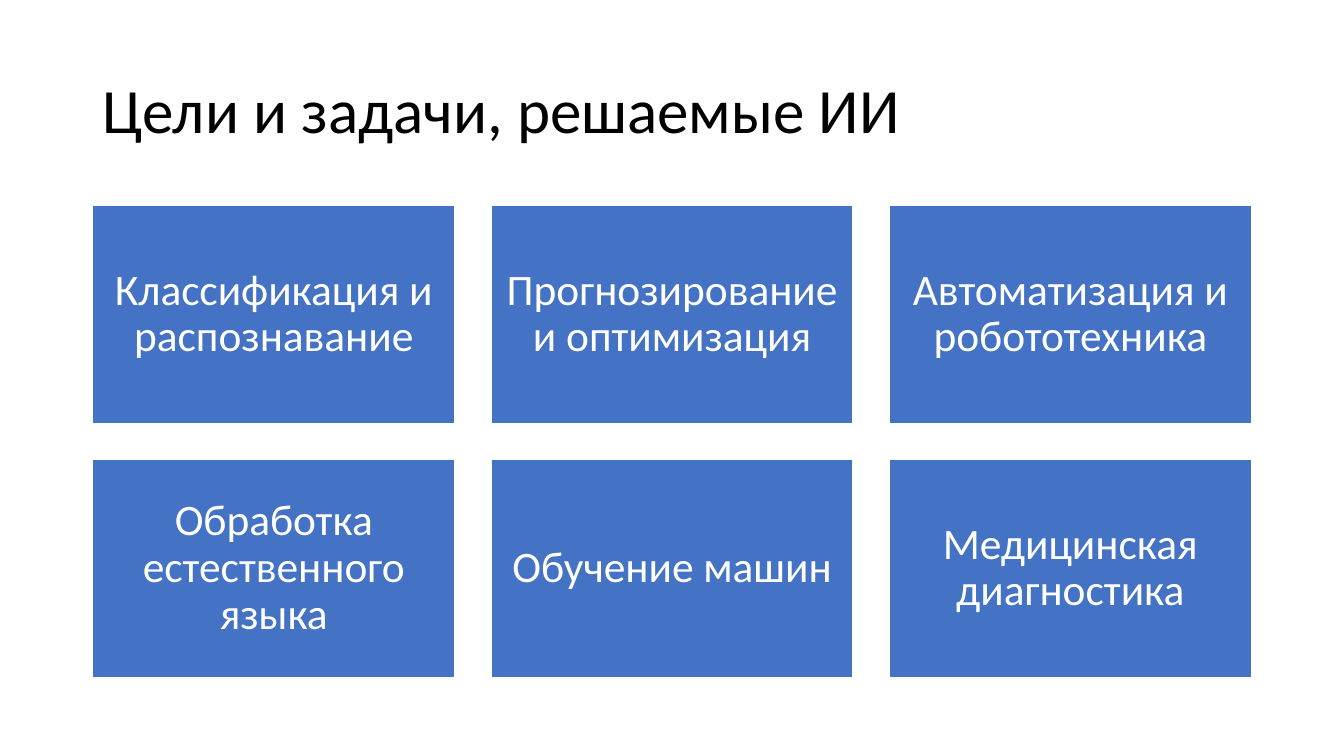
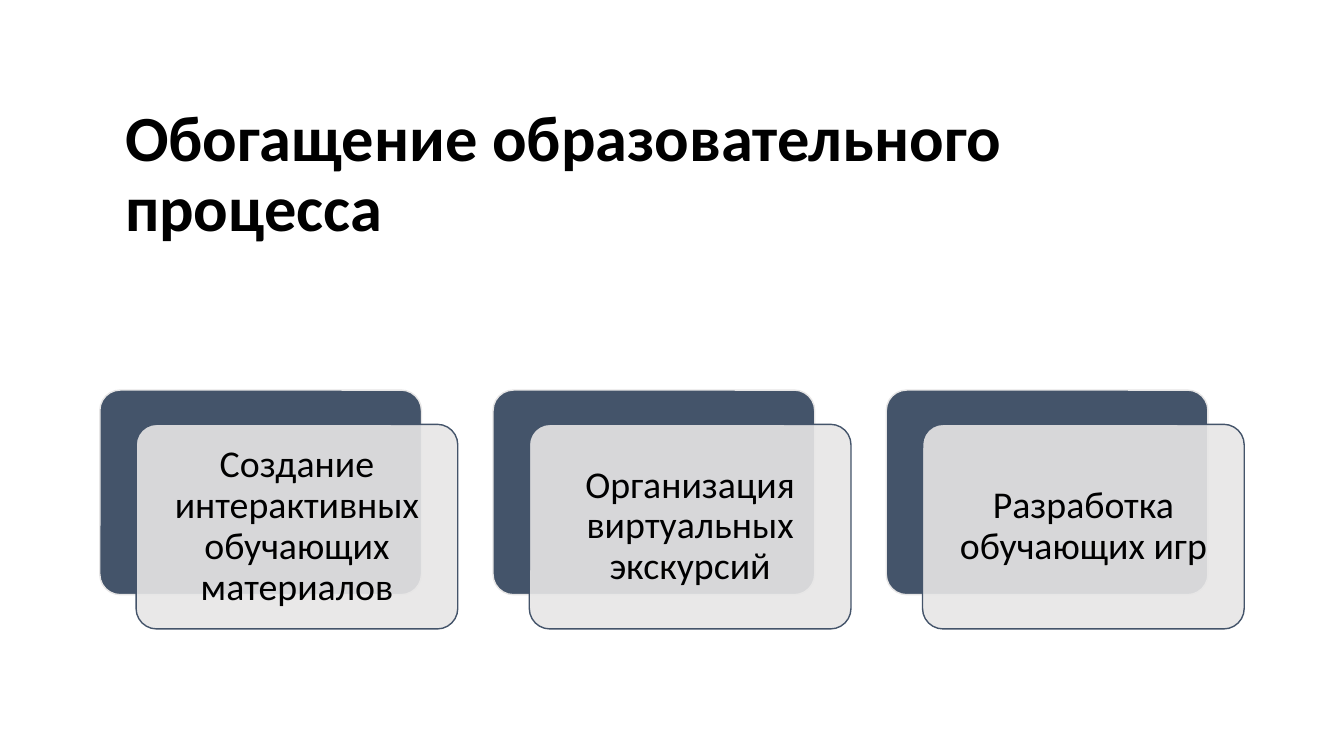
from lxml import etree
from pptx import Presentation
from pptx.dml.color import RGBColor
from pptx.enum.shapes import MSO_SHAPE as SHAPE
from pptx.enum.text import MSO_ANCHOR, MSO_AUTO_SIZE, PP_ALIGN
from pptx.oxml.ns import qn
from pptx.util import Inches, Pt

FONT = "Calibri"
BLACK = RGBColor(0x00, 0x00, 0x00)
WHITE = RGBColor(0xFF, 0xFF, 0xFF)
BLUE = RGBColor(0x44, 0x72, 0xC4)
SLATE = RGBColor(0x44, 0x54, 0x6A)
LIGHT = RGBColor(0xE7, 0xE6, 0xE6)

prs = Presentation()
prs.slide_width, prs.slide_height = Inches(13.33), Inches(7.5)
title_only = prs.slide_layouts[5]


def write(shape, text, size, color, align=PP_ALIGN.CENTER, inset=None, bold=False):
    """Fill a shape with one vertically centred paragraph."""
    frame = shape.text_frame
    frame.text = text
    frame.word_wrap = True
    frame.auto_size = MSO_AUTO_SIZE.NONE
    frame.vertical_anchor = MSO_ANCHOR.MIDDLE
    if inset is not None:
        for side in ("left", "top", "right", "bottom"):
            setattr(frame, f"margin_{side}", Inches(inset))
    paragraph = frame.paragraphs[0]
    paragraph.alignment = align
    paragraph.line_spacing = 0.9
    for name, value in {"name": FONT, "size": Pt(size), "bold": bold}.items():
        setattr(paragraph.font, name, value)
    paragraph.font.color.rgb = color


def add_card(slide, kind, box, fill, line):
    card = slide.shapes.add_shape(kind, *map(Inches, box))
    card.shadow.inherit = False
    card.fill.solid()
    card.fill.fore_color.rgb = fill
    card.line.color.rgb = line
    card.line.width = Pt(1)
    if kind == SHAPE.ROUNDED_RECTANGLE:
        card.adjustments[0] = 0.1
    return card


slides = []
for heading, box, size, bold in (
    ("Цели и задачи, решаемые ИИ", (0.92, 0.4, 11.5, 1.45), 45, False),
    ("Обогащение образовательного процесса", (1.14, 0.89, 11.13, 1.7), 46, True),
):
    slide = prs.slides.add_slide(title_only)
    title = slide.shapes.title
    title.left, title.top, title.width, title.height = map(Inches, box)
    write(title, heading, size, BLACK, PP_ALIGN.LEFT, bold=bold)
    slides.append(slide)
goals_slide, education_slide = slides

# Goals: three columns by two rows
GOAL_W, GOAL_H, GOAL_GAP = 3.59, 2.16, 0.36
goals = (
    "Классификация и распознавание",
    "Прогнозирование и оптимизация",
    "Автоматизация и робототехника",
    "Обработка естественного языка",
    "Обучение машин",
    "Медицинская диагностика",
)
for index, goal in enumerate(goals):
    row, column = divmod(index, 3)
    left = 0.92 + column * (GOAL_W + GOAL_GAP)
    top = 2.04 + row * (GOAL_H + GOAL_GAP)
    card = add_card(goals_slide, SHAPE.RECTANGLE, (left, top, GOAL_W, GOAL_H), BLUE, WHITE)
    write(card, goal, 31, WHITE, inset=0.13)

# Education: a translucent card over an offset dark one
STEP_W, STEP_H, STEP_PITCH = 3.19, 2.03, 3.9
steps = (
    "Создание интерактивных обучающих материалов",
    "Организация виртуальных экскурсий",
    "Разработка обучающих игр",
)
for index, step in enumerate(steps):
    left, top = 0.99 + index * STEP_PITCH, 3.87
    add_card(education_slide, SHAPE.ROUNDED_RECTANGLE,
             (left, top, STEP_W, STEP_H), SLATE, LIGHT)
    front = add_card(education_slide, SHAPE.ROUNDED_RECTANGLE,
                     (left + 0.36, top + 0.34, STEP_W, STEP_H), LIGHT, SLATE)
    fill_color = front.fill._xPr.find(qn("a:solidFill"))[0]
    etree.SubElement(fill_color, qn("a:alpha"), val="90000")
    write(front, step, 27, BLACK, inset=0.11)

prs.save("out.pptx")
